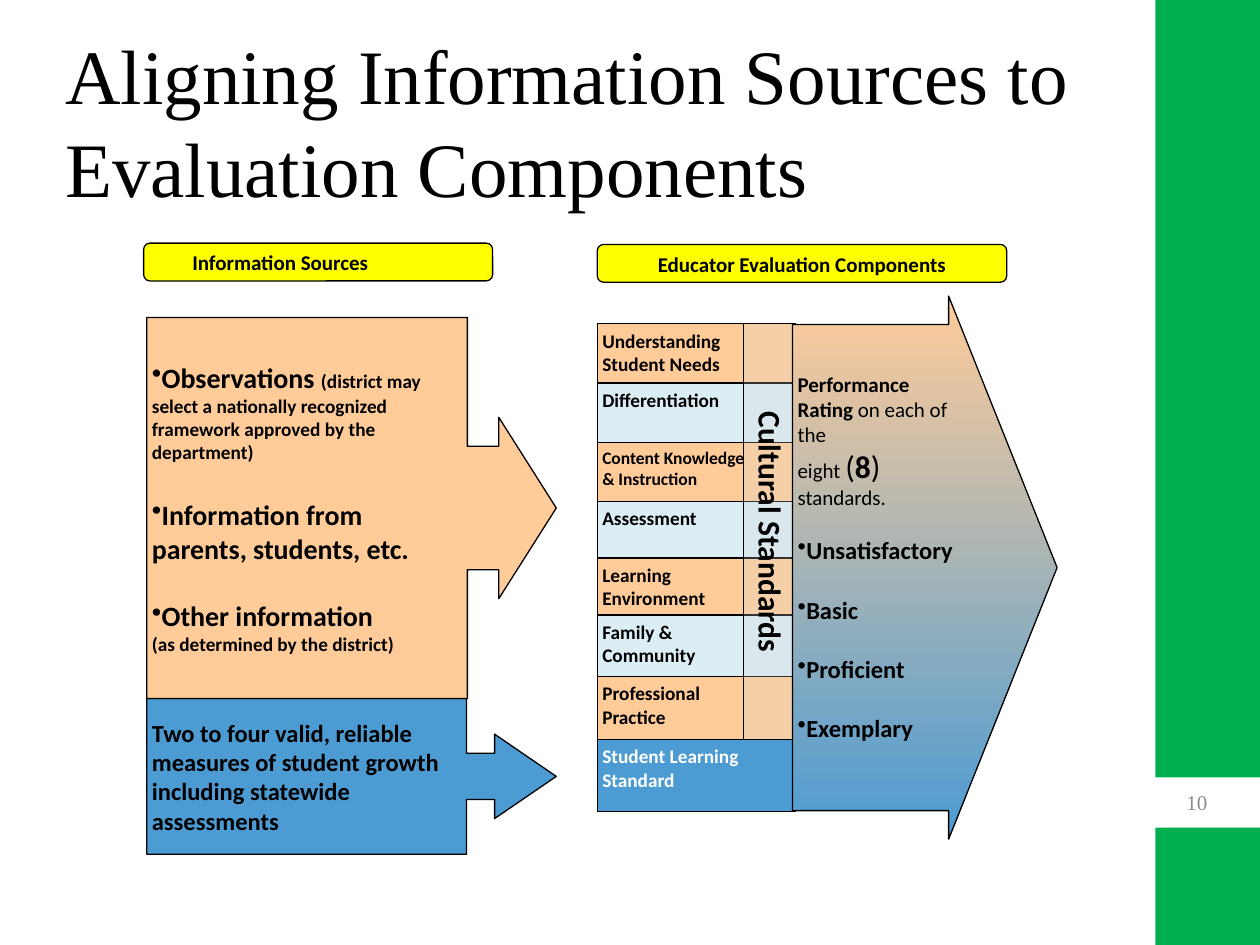
from lxml import etree
from pptx import Presentation, util as u
from pptx.dml.color import RGBColor
from pptx.enum import shapes, text
from pptx.oxml.ns import qn

GREEN = RGBColor(0x00, 0xB0, 0x50)
YELLOW = RGBColor(0xFF, 0xFF, 0x00)
ORANGE = RGBColor(0xFF, 0xCC, 0x99)
BLUE = RGBColor(0x4C, 0x9B, 0xD3)
PALE = RGBColor(0xDB, 0xEE, 0xF4)
GREY = RGBColor(0xD9, 0xD9, 0xD9)
MUTED = RGBColor(0x8C, 0x8C, 0x8C)
BLACK = RGBColor(0x00, 0x00, 0x00)
WHITE = RGBColor(0xFF, 0xFF, 0xFF)

UNIT = u.Inches(0.1)
SHAPE = shapes.MSO_SHAPE
MIDDLE = text.MSO_ANCHOR.MIDDLE
CENTER = text.PP_ALIGN.CENTER


def part(box, x, y, w, h):
    left, top, width, height = box
    return left + x * width, top + y * height, w * width, h * height


def place(box):
    return [round(v * UNIT) for v in box]


def add_block(s, kind, box, fill=None, line=BLACK, adj=()):
    sp = s.shapes.add_shape(kind, *place(box))
    sp.shadow.inherit = False
    for i, value in enumerate(adj):
        sp.adjustments[i] = value
    if fill is not None:
        sp.fill.solid()
        sp.fill.fore_color.rgb = fill
    if line is None:
        sp.line.fill.background()
    else:
        sp.line.color.rgb = line
        sp.line.width = u.Pt(0.75)
    return sp


def write(sp, paragraphs, color=BLACK, font="Calibri", align=text.PP_ALIGN.LEFT,
          anchor=text.MSO_ANCHOR.TOP, inset=0.04):
    tf = sp.text_frame
    tf.word_wrap = True
    tf.vertical_anchor = anchor
    tf.margin_left = tf.margin_right = u.Inches(inset)
    tf.margin_top = tf.margin_bottom = u.Inches(min(inset, 0.05))
    for i, (bullet, before, runs) in enumerate(paragraphs):
        p = tf.add_paragraph() if i else tf.paragraphs[0]
        p.alignment = align
        if before:
            p.space_before = u.Pt(before)
        if bullet:
            etree.SubElement(p._p.get_or_add_pPr(), qn("a:buChar"), char="•")
        for words, size, bold in runs:
            r = p.add_run()
            r.text = words
            r.font.name = font
            r.font.size = u.Pt(size)
            r.font.bold = bold
            r.font.color.rgb = color
    return tf


def plain(words, size, bold=True):
    return [(False, 0, [(line, size, bold)]) for line in words.split("\n")]


def title(s, box):
    sp = s.shapes.add_textbox(*place(box))
    write(sp, plain("Aligning Information Sources to Evaluation Components", 44, False),
          font="Times New Roman", anchor=MIDDLE, inset=0.1)


def heading(s, box, words, right_inset=0.04):
    sp = add_block(s, SHAPE.ROUNDED_RECTANGLE, box, YELLOW, adj=[0.167])
    tf = write(sp, plain(words, 12), align=CENTER)
    tf.margin_right = u.Inches(right_inset)


def sources(s, box):
    growth = add_block(s, SHAPE.RIGHT_ARROW_CALLOUT, part(box, 0, 0.71, 1, 0.29), BLUE,
                       adj=[0.296, 0.271, 0.396, 0.781])
    write(growth, plain("Two to four valid, reliable measures of student growth "
                        "including statewide assessments", 14), anchor=MIDDLE)
    evidence = add_block(s, SHAPE.RIGHT_ARROW_CALLOUT, part(box, 0, 0, 1, 0.71), ORANGE,
                         adj=[0.324, 0.238, 0.151, 0.783])
    write(evidence, [
        (True, 0, [("Observations ", 16, True),
                   ("(district may select a nationally recognized framework "
                    "approved by the department)", 11, True)]),
        (True, 19.5, [("Information from parents, students, etc.", 16, True)]),
        (True, 19.5, [("Other information", 16, True)]),
        (False, 0, [("(as determined by the district)", 11, True)]),
    ], anchor=MIDDLE)


def standards(s, box):
    rows = [
        ("Understanding\nStudent Needs", 11, 47),
        ("Differentiation", 11, 47),
        ("Content Knowledge\n& Instruction", 10, 47),
        ("Assessment", 11, 45),
        ("Learning\nEnvironment", 11, 45),
        ("Family &\nCommunity", 11, 49),
        ("Professional\nPractice", 11, 50),
        ("Student Learning Standard", 11, 57),
    ]
    total = sum(weight for _, _, weight in rows)
    top = 0
    for i, (words, size, weight) in enumerate(rows):
        last = i == len(rows) - 1
        fill = BLUE if last else (ORANGE, PALE)[i % 2]
        sp = add_block(s, SHAPE.RECTANGLE, part(box, 0, top / total, 1, weight / total), fill)
        write(sp, plain(words, size), color=WHITE if last else BLACK)
        top += weight
    culture_band(s, part(box, 0.74, 0, 0.26, (total - rows[-1][2]) / total))


def culture_band(s, box):
    x, y, w, h = box
    turned = (x + (w - h) / 2, y + (h - w) / 2, h, w)
    sp = add_block(s, SHAPE.RECTANGLE, turned, GREY)
    sp.rotation = 90
    color = sp._element.spPr.find(qn("a:solidFill"))[0]
    etree.SubElement(color, qn("a:alpha"), val="24000")
    write(sp, plain("Cultural Standards", 18), align=CENTER)


def ratings(s, box):
    sp = add_block(s, SHAPE.RIGHT_ARROW, box, adj=[0.895, 0.41])
    sp.fill.gradient()
    sp.fill.gradient_angle = 270
    for stop, color, position in zip(sp.fill.gradient_stops, (ORANGE, BLUE), (0, 1)):
        stop.color.rgb = color
        stop.position = position
    levels = ["Unsatisfactory", "Basic", "Proficient", "Exemplary"]
    tf = write(sp, [
        (False, 0, [("Performance Rating ", 12, True), ("on each of the", 12, False)]),
        (False, 0, [("eight ", 12, False), ("(", 18, False), ("8", 18, True),
                    (") ", 18, False), ("standards.", 12, False)]),
    ] + [(True, 17 if i else 14.5, [(level, 14, True)]) for i, level in enumerate(levels)],
        anchor=MIDDLE)
    tf.margin_bottom = u.Inches(0.21)


def page_number(s, box):
    sp = add_block(s, SHAPE.RECTANGLE, box, WHITE, line=None)
    write(sp, plain("10", 12, False), color=MUTED, font="Times New Roman",
          align=CENTER, anchor=MIDDLE, inset=0.1)


def main():
    prs = Presentation()
    prs.slide_width, prs.slide_height = 100 * UNIT, 75 * UNIT
    s = prs.slides.add_slide(prs.slide_layouts[6])
    add_block(s, SHAPE.RECTANGLE, (91.7, 0, 8.3, 75), GREEN, line=None)
    title(s, (4.2, 0.8, 83.3, 17.5))
    heading(s, (11.4, 19.3, 27.7, 3), "Information Sources", right_inset=0.64)
    heading(s, (47.4, 19.4, 32.5, 3), "Educator Evaluation Components")
    sources(s, (11.65, 25.2, 32.5, 42.6))
    standards(s, (47.4, 25.7, 15.7, 38.7))
    ratings(s, (62.9, 23.5, 21, 43.1))
    page_number(s, (90, 61.7, 10, 4))
    prs.save("out.pptx")


if __name__ == "__main__":
    main()
